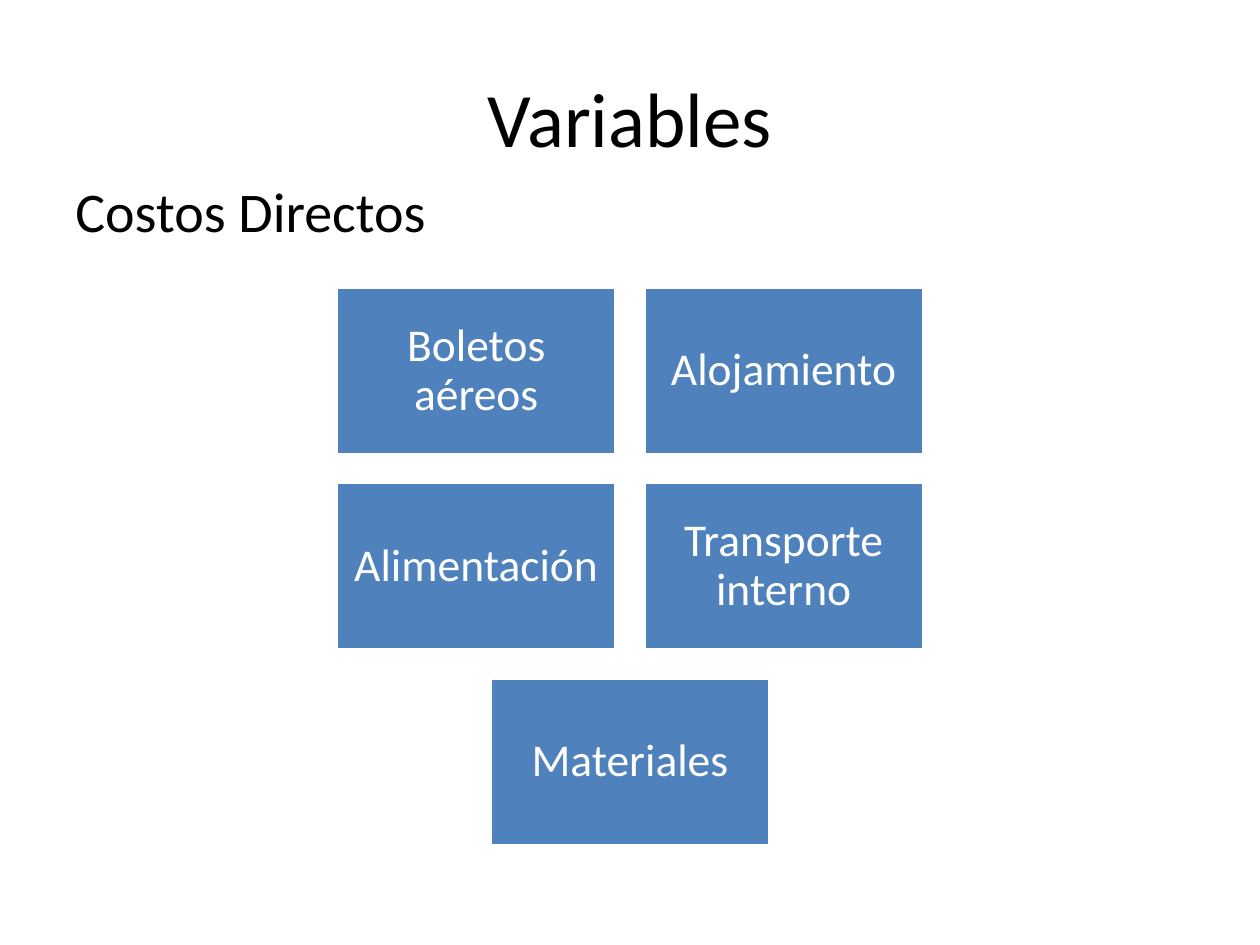
from pptx import Presentation
from pptx.dml.color import RGBColor
from pptx.enum.shapes import MSO_SHAPE
from pptx.enum.text import MSO_ANCHOR, PP_ALIGN
from pptx.util import Inches, Pt

BLACK = RGBColor(0x00, 0x00, 0x00)
WHITE = RGBColor(0xFF, 0xFF, 0xFF)
BLUE = RGBColor(0x4F, 0x81, 0xBD)
FONT = "Calibri"
COSTS = ["Boletos aéreos", "Alojamiento", "Alimentación", "Transporte interno", "Materiales"]


def write(shape, text, size, color, alignment, anchor):
    frame = shape.text_frame
    frame.word_wrap = True
    frame.vertical_anchor = anchor
    paragraph = frame.paragraphs[0]
    paragraph.text = text
    paragraph.alignment = alignment
    paragraph.font.name = FONT
    paragraph.font.size = Pt(size)
    paragraph.font.color.rgb = color
    return paragraph


def add_heading(slide, box, text, size, alignment, anchor):
    shape = slide.shapes.add_textbox(*map(Inches, box))
    write(shape, text, size, BLACK, alignment, anchor)


def add_cost_block(slide, box, text):
    shape = slide.shapes.add_shape(MSO_SHAPE.RECTANGLE, *map(Inches, box))
    shape.shadow.inherit = False
    shape.fill.solid()
    shape.fill.fore_color.rgb = BLUE
    shape.line.color.rgb = WHITE
    shape.line.width = Pt(2)
    frame = shape.text_frame
    frame.margin_left = frame.margin_right = Inches(0.11)
    frame.margin_top = frame.margin_bottom = Inches(0.11)
    paragraph = write(shape, text, 26, WHITE, PP_ALIGN.CENTER, MSO_ANCHOR.MIDDLE)
    paragraph.line_spacing = 0.9


def add_cost_grid(slide, box, costs, columns=2, gap=0.22):
    left, top, width, height = box
    rows = [costs[start:start + columns] for start in range(0, len(costs), columns)]
    block_width = (width - gap * (columns - 1)) / columns
    block_height = (height - gap * (len(rows) - 1)) / len(rows)
    for row, names in enumerate(rows):
        row_width = len(names) * (block_width + gap) - gap
        row_left = left + (width - row_width) / 2
        row_top = top + row * (block_height + gap)
        for column, name in enumerate(names):
            block_left = row_left + column * (block_width + gap)
            add_cost_block(slide, (block_left, row_top, block_width, block_height), name)


def main():
    presentation = Presentation()
    presentation.slide_width = Inches(10)
    presentation.slide_height = Inches(7.5)
    slide = presentation.slides.add_slide(presentation.slide_layouts[6])
    add_heading(slide, (0.5, 0.3, 9, 1.25), "Variables", 44, PP_ALIGN.CENTER, MSO_ANCHOR.MIDDLE)
    add_heading(slide, (0.5, 1.35, 9, 4.95), "Costos Directos", 32, PP_ALIGN.LEFT, MSO_ANCHOR.TOP)
    add_cost_grid(slide, (2.67, 2.28, 4.66, 4.43), COSTS)
    presentation.save("out.pptx")


if __name__ == "__main__":
    main()
